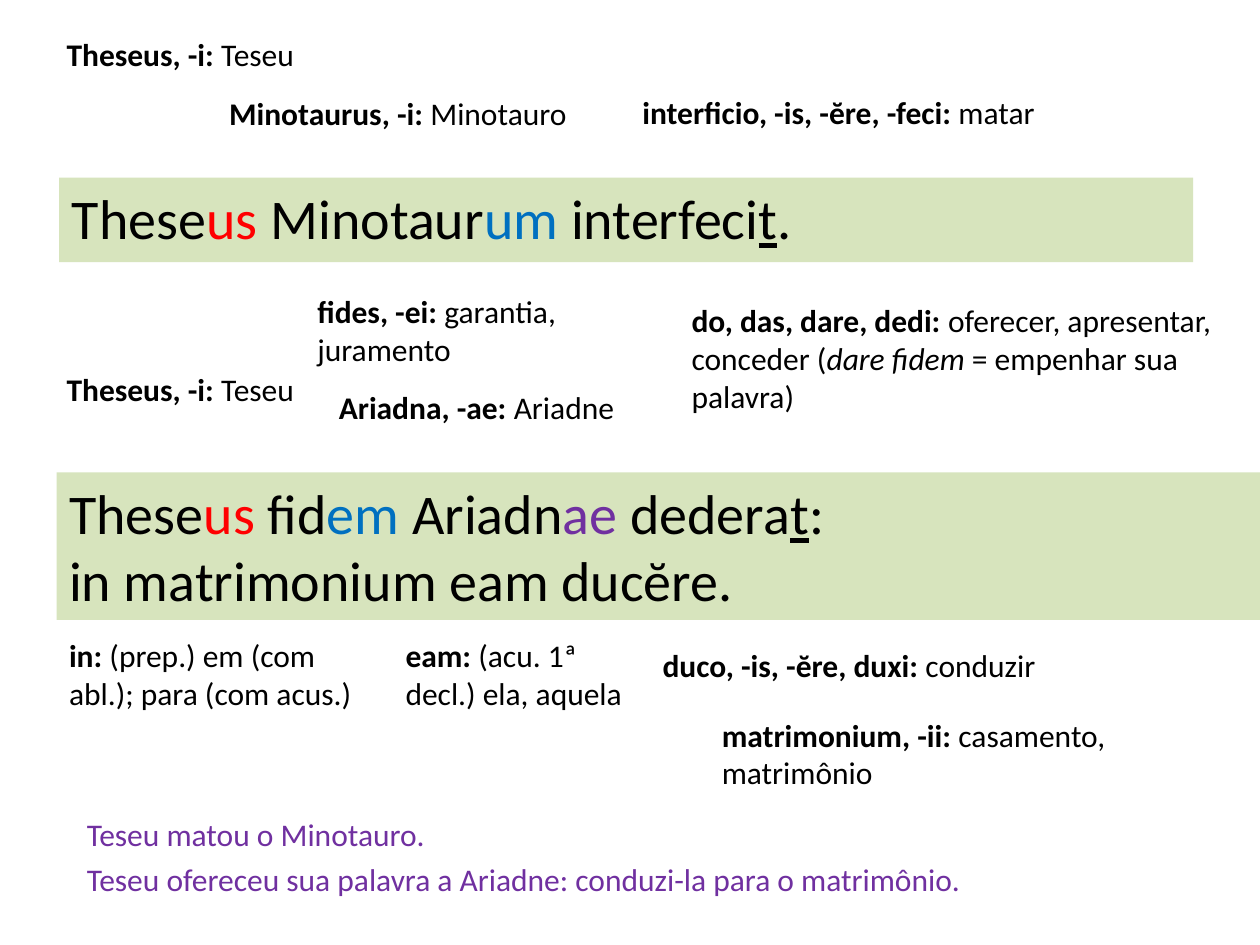
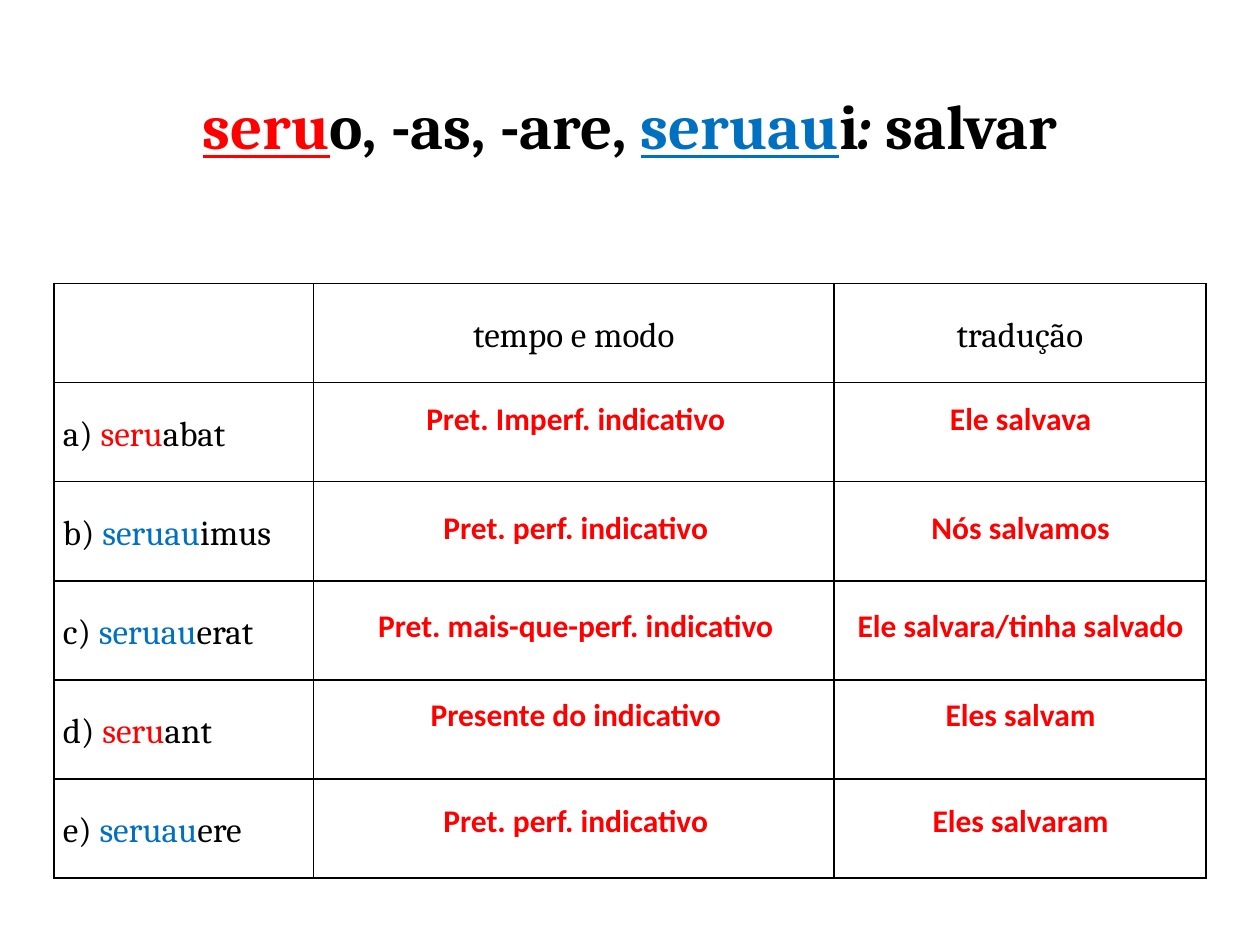
import pptx
import pptx.util
import pptx.dml.color
import pptx.enum.text
import pptx.oxml
import pptx.oxml.ns

BLACK, RED, BLUE, PURPLE, GREEN = "000000", "FF0000", "0070C0", "7030A0", "D7E4BD"
COLS = 100
SANS, SERIF = "Calibri", "Cambria"
ALIGN = pptx.enum.text.PP_ALIGN
ANCHOR = pptx.enum.text.MSO_ANCHOR

SENTENCE = [("These", BLACK), ("us ", RED), ("Minotaur", BLACK), ("um ", BLUE),
            ("interfeci", BLACK), ("t", BLACK, "u"), (".", BLACK)]
SENTENCE_BOX = (4.7, 14.1, 90, 6.7)
PROMISE = [
    [("These", BLACK), ("us ", RED), ("fid", BLACK), ("em ", BLUE), ("Ariadn", BLACK),
     ("ae ", PURPLE), ("dedera", BLACK), ("t", BLACK, "u"), (":", BLACK)],
    [("in matrimonium eam ducĕre.", BLACK)],
]
PROMISE_BOX = (4.5, 37.5, 95.5, 11.7)

GLOSSARY = [
    (50, 6.9, 33.6, 1, "interficio, -is, -ĕre, -feci:", [" matar"]),
    (4.3, 2.3, 22.8, 1, "Theseus, -i:", [" Teseu"]),
    (17.2, 7, 30.5, 1, "Minotaurus, -i:", [" Minotauro"]),
    (53.9, 23.4, 46.1, 3, "do, das, dare, dedi:",
     [" oferecer, apresentar, conceder (", "dare fidem", " = empenhar sua palavra)"]),
    (4.3, 28.9, 22.8, 1, "Theseus, -i:", [" Teseu"]),
    (24.2, 22.7, 24.2, 2, "fides, -ei:", [" garantia, juramento"]),
    (25.9, 30.3, 24.2, 1, "Ariadna, -ae:", [" Ariadne"]),
    (51.6, 50.8, 35.2, 1, "duco, -is, -ĕre, duxi:", [" conduzir"]),
    (31.2, 50, 21.1, 2, "eam:", [" (acu. 1ª decl.) ela, aquela"]),
    (4.5, 50, 25, 2, "in:", [" (prep.) em (com abl.); para (com acus.)"]),
    (56.3, 56.3, 35.2, 2, "matrimonium, -ii:", [" casamento, matrimônio"]),
]
TRANSLATIONS = [
    (64.2, "Teseu matou o Minotauro."),
    (67.8, "Teseu ofereceu sua palavra a Ariadne: conduzi-la para o matrimônio."),
]

VERB = [("seru", RED, "bu"), ("o, -as, -are, ", BLACK, "b"), ("seruau", BLUE, "bu"),
        ("i", BLACK, "b"), (": ", BLACK, "bi"), ("salvar", BLACK, "b")]
HEADERS = ["tempo e modo", "tradução"]
FORMS = [
    ("a) ", "seru", "abat", RED, 31.2, "Pret. Imperf. indicativo", "Ele salvava"),
    ("b) ", "seruau", "imus", BLUE, 39.8, "Pret. perf. indicativo", "Nós salvamos"),
    ("c) ", "seruau", "erat", BLUE, 47.6, "Pret. mais-que-perf. indicativo",
     "Ele salvara/tinha salvado"),
    ("d) ", "seru", "ant", RED, 54.7, "Presente do indicativo", "Eles salvam"),
    ("e) ", "seruau", "ere", BLUE, 63.1, "Pret. perf. indicativo", "Eles salvaram"),
]
TABLE_LEFT, TABLE_TOP, ROW_HEIGHT = 4.3, 22.5, 7.87
TABLE_COLUMNS = [20.6, 41.3, 29.5]
MOOD_LEFT, MOOD_WIDTH = 27.2, 37
MEANING_CENTRE, MEANING_WIDTH = 81, 28.9

prs = pptx.Presentation()
prs.slide_width = pptx.util.Inches(10)
prs.slide_height = pptx.util.Inches(7.5)


def grid(*values):
    return [round(v * prs.slide_width / COLS) for v in values]


def rgb(value):
    return pptx.dml.color.RGBColor.from_string(value)


def write(p, runs, size, font=SANS, align=None):
    p.alignment = align
    for text, colour, *style in runs:
        r = p.add_run()
        r.text = text
        r.font.size = pptx.util.Pt(size)
        r.font.name = font
        r.font.color.rgb = rgb(colour)
        flags = style[0] if style else ""
        r.font.bold = "b" in flags
        r.font.italic = "i" in flags
        r.font.underline = "u" in flags


def textbox(s, box, paragraphs, size=18, align=None):
    sp = s.shapes.add_textbox(*grid(*box))
    tf = sp.text_frame
    tf.word_wrap = True
    for i, runs in enumerate(paragraphs):
        write(tf.add_paragraph() if i else tf.paragraphs[0], runs, size, align=align)
    return sp


def place(sp, box):
    sp.left, sp.top, sp.width, sp.height = grid(*box)
    sp.text_frame.auto_size = pptx.enum.text.MSO_AUTO_SIZE.NONE
    sp.text_frame.vertical_anchor = ANCHOR.TOP
    return sp.text_frame


def paint_band(sp):
    sp.fill.solid()
    sp.fill.fore_color.rgb = rgb(GREEN)


def lines_height(lines):
    return 1 + 3.03 * lines


def set_borders(cell):
    tc_pr = cell._tc.get_or_add_tcPr()
    for i, side in enumerate(("lnL", "lnR", "lnT", "lnB")):
        tc_pr.insert(i, pptx.oxml.parse_xml(
            f'<a:{side} {pptx.oxml.ns.nsdecls("a")} w="12700"><a:solidFill>'
            f'<a:srgbClr val="{BLACK}"/></a:solidFill></a:{side}>'))


def build_sentences():
    s = prs.slides.add_slide(prs.slide_layouts[1])
    title = s.shapes.title._element
    title.getparent().remove(title)
    body = s.placeholders[1]
    p = place(body, SENTENCE_BOX).paragraphs[0]
    p_pr = p._p.get_or_add_pPr()
    p_pr.set("marL", "0")
    p_pr.set("indent", "0")
    p_pr.append(pptx.oxml.parse_xml(f'<a:buNone {pptx.oxml.ns.nsdecls("a")}/>'))
    write(p, SENTENCE, 32)
    paint_band(body)
    paint_band(textbox(s, PROMISE_BOX, PROMISE, 32))
    for top, text in TRANSLATIONS:
        textbox(s, (5.9, top, 89.8, lines_height(1)), [[(text, PURPLE)]])
    for left, top, width, lines, entry, meaning in GLOSSARY:
        runs = [(entry, BLACK, "b")]
        runs += [(t, BLACK, "i" if i % 2 else "") for i, t in enumerate(meaning)]
        textbox(s, (left, top, width, lines_height(lines)), [runs])


def build_verb_table():
    s = prs.slides.add_slide(prs.slide_layouts[5])
    tf = place(s.shapes.title, (5, 2.9, 90, 18.9))
    tf.margin_top = grid(4)[0]
    write(tf.paragraphs[0], VERB, 36, SERIF, ALIGN.CENTER)

    rows = len(FORMS) + 1
    frame = s.shapes.add_table(rows, len(TABLE_COLUMNS), *grid(
        TABLE_LEFT, TABLE_TOP, sum(TABLE_COLUMNS), rows * ROW_HEIGHT))
    table = frame.table
    table.first_row = table.horz_banding = False
    for column, width in zip(table.columns, grid(*TABLE_COLUMNS)):
        column.width = width
    for cell in table.iter_cells():
        cell.fill.background()
        set_borders(cell)
        cell.vertical_anchor = ANCHOR.MIDDLE
        cell.margin_left = cell.margin_right = grid(0.7)[0]
        cell.margin_top = cell.margin_bottom = 0
        cell.text_frame.paragraphs[0].line_spacing = 1.15
    for c, header in enumerate(HEADERS, 1):
        write(table.cell(0, c).text_frame.paragraphs[0], [(header, BLACK)], 20, SERIF, ALIGN.CENTER)
    for row, (label, stem, ending, colour, top, mood, meaning) in enumerate(FORMS, 1):
        write(table.cell(row, 0).text_frame.paragraphs[0],
              [(label, BLACK), (stem, colour), (ending, BLACK)], 20, SERIF)
        for left, width, answer in (
                (MOOD_LEFT, MOOD_WIDTH, mood),
                (MEANING_CENTRE - MEANING_WIDTH / 2, MEANING_WIDTH, meaning)):
            textbox(s, (left, top, width, lines_height(1)),
                    [[(answer, RED, "b")]], align=ALIGN.CENTER)


build_sentences()
build_verb_table()
prs.save("out.pptx")
